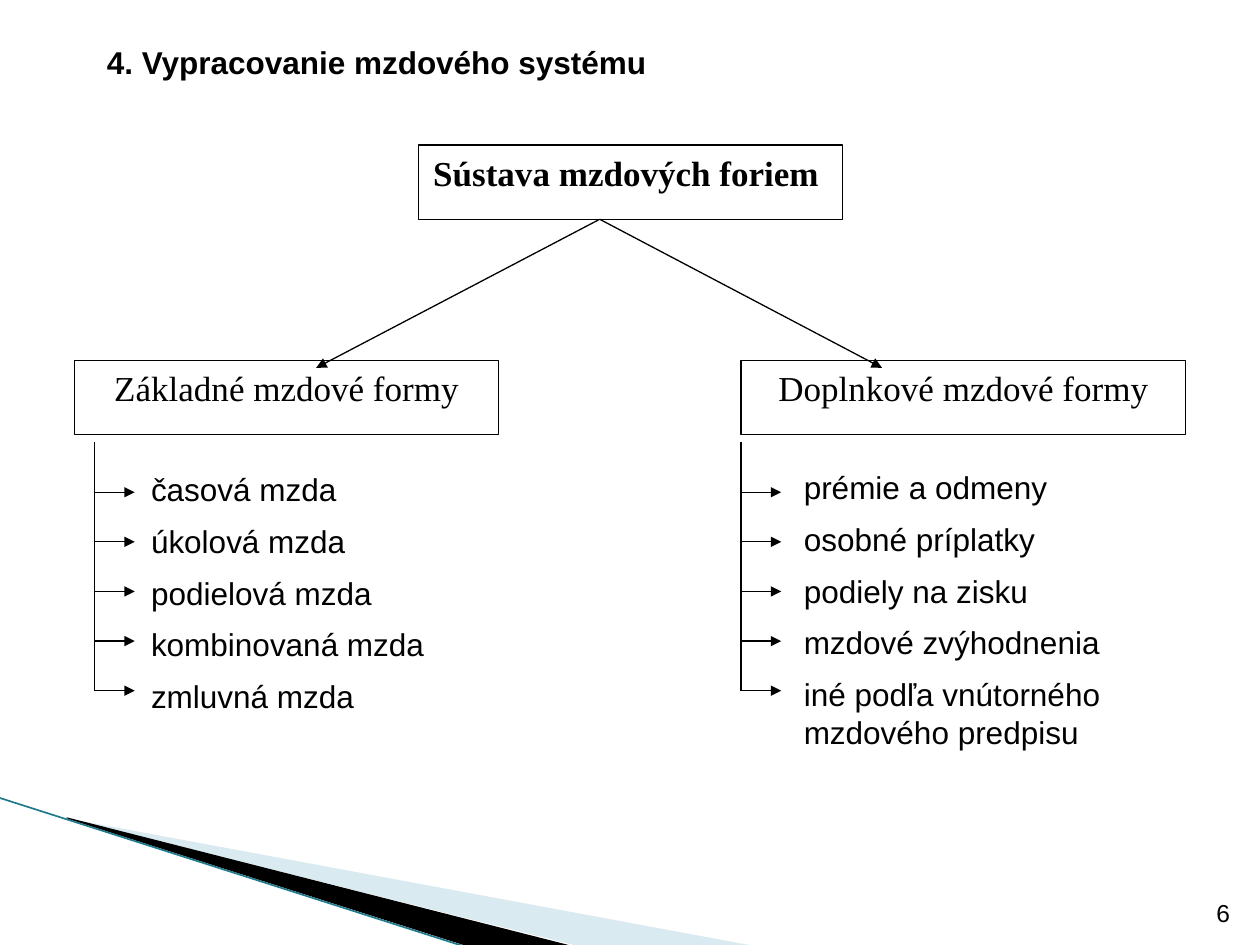
from dataclasses import dataclass

from lxml.etree import SubElement
from pptx import Presentation
from pptx.dml.color import RGBColor
from pptx.enum.shapes import MSO_CONNECTOR, MSO_SHAPE
from pptx.enum.text import MSO_ANCHOR, PP_ALIGN
from pptx.oxml.ns import qn
from pptx.shapes.connector import Connector
from pptx.slide import Slide
from pptx.text.text import TextFrame
from pptx.util import Pt

BLACK = RGBColor(0x00, 0x00, 0x00)
WHITE = RGBColor(0xFF, 0xFF, 0xFF)
PALE_BLUE = RGBColor(0xA0, 0xCB, 0xDC)
TEAL = RGBColor(0x1F, 0x7A, 0x8C)

SANS, SERIF = "Arial", "Times New Roman"
BRANCH_TOP, FIRST_ARROW, ARROW_STEP, ARROW_LENGTH = 252.7, 281.3, 28.35, 23
BOX_HEIGHT = 42.5

Point = tuple[float, float]


@dataclass
class Frame:
    left: float
    top: float
    width: float
    height: float

    def emu(self) -> tuple[Pt, Pt, Pt, Pt]:
        return Pt(self.left), Pt(self.top), Pt(self.width), Pt(self.height)


@dataclass
class WageGroup:
    heading: str
    box: Frame
    branch_x: float
    list_frame: Frame
    wage_forms: list[str]
    pointer_end: Point


@dataclass
class Wedge:
    outline: list[Point]
    color: RGBColor
    opacity: int


WEDGES = [
    Wedge([(39.6, 468.5), (428.4, 540.5), (328.3, 540.5), (39.6, 468)], PALE_BLUE, 40),
    Wedge([(38.2, 467.3), (329, 540.7), (267.8, 541.4), (38.9, 468)], BLACK, 100),
]

ROOT_BOX = Frame(239, 82.8, 242.6, BOX_HEIGHT)
POINTER_START = (342.7, 125.3)

GROUPS = [
    WageGroup(
        "Základné mzdové formy", Frame(42.5, 205.9, 242.6, BOX_HEIGHT),
        54, Frame(79.2, 265, 231.8, 145.4),
        ["časová mzda", "úkolová mzda", "podielová mzda", "kombinovaná mzda",
         "zmluvná mzda"],
        (180.7, 210.2),
    ),
    WageGroup(
        "Doplnkové mzdové formy", Frame(423.4, 205.9, 254.2, BOX_HEIGHT),
        423.4, Frame(452.2, 263.9, 236.9, 167),
        ["prémie a odmeny", "osobné príplatky", "podiely na zisku",
         "mzdové zvýhodnenia", "iné podľa vnútorného mzdového predpisu"],
        (504, 210.2),
    ),
]


def write(frame: TextFrame, lines: list[str], size: float, font: str = SANS,
          bold: bool = False, align: PP_ALIGN = PP_ALIGN.LEFT, gap: float = 0) -> None:
    frame.word_wrap = True
    frame.text = "\n".join(lines)
    for index, paragraph in enumerate(frame.paragraphs):
        paragraph.alignment = align
        if index:
            paragraph.space_before = Pt(gap)
        for run in paragraph.runs:
            run.font.name = font
            run.font.size = Pt(size)
            run.font.bold = bold
            run.font.color.rgb = BLACK


def add_text(slide: Slide, place: Frame) -> TextFrame:
    return slide.shapes.add_textbox(*place.emu()).text_frame


def add_box(slide: Slide, place: Frame, heading: str, bold: bool = False) -> None:
    box = slide.shapes.add_shape(MSO_SHAPE.RECTANGLE, *place.emu())
    box.shadow.inherit = False
    box.fill.solid()
    box.fill.fore_color.rgb = WHITE
    box.line.color.rgb = BLACK
    box.line.width = Pt(0.75)
    box.text_frame.vertical_anchor = MSO_ANCHOR.TOP
    write(box.text_frame, [heading], 20, SERIF, bold, PP_ALIGN.CENTER)


def add_line(slide: Slide, start: Point, end: Point, color: RGBColor = BLACK,
             width: float = 0.75) -> Connector:
    line = slide.shapes.add_connector(
        MSO_CONNECTOR.STRAIGHT, *(Pt(value) for value in start + end))
    line.line.color.rgb = color
    line.line.width = Pt(width)
    SubElement(line._element.spPr, qn("a:effectLst"))
    return line


def add_arrow(slide: Slide, start: Point, end: Point) -> None:
    arrow = add_line(slide, start, end)
    SubElement(arrow.line._get_or_add_ln(), qn("a:tailEnd"), type="triangle")


def add_wedge(slide: Slide, wedge: Wedge) -> None:
    first, *rest = wedge.outline
    builder = slide.shapes.build_freeform(*first, scale=Pt(1))
    builder.add_line_segments(rest, close=True)
    shape = builder.convert_to_shape()
    shape.shadow.inherit = False
    shape.line.fill.background()
    shape.fill.solid()
    shape.fill.fore_color.rgb = wedge.color
    if wedge.opacity < 100:
        color = shape._element.spPr.find(qn("a:solidFill"))[0]
        SubElement(color, qn("a:alpha"), val=str(wedge.opacity * 1000))


def add_group(slide: Slide, group: WageGroup) -> None:
    """Draw a heading box, its pointer and the branching list below it."""
    add_box(slide, group.box, group.heading)
    add_arrow(slide, POINTER_START, group.pointer_end)
    x = group.branch_x
    levels = [FIRST_ARROW + i * ARROW_STEP for i in range(len(group.wage_forms))]
    add_line(slide, (x, BRANCH_TOP), (x, levels[-1]))
    for y in levels:
        add_arrow(slide, (x, y), (x + ARROW_LENGTH, y))
    write(add_text(slide, group.list_frame), group.wage_forms, 18, gap=8)


def main() -> None:
    deck = Presentation()
    deck.slide_width, deck.slide_height = Pt(720), Pt(540)
    slide = deck.slides.add_slide(deck.slide_layouts[6])

    for wedge in WEDGES:
        add_wedge(slide, wedge)
    add_line(slide, (-0.7, 455.8), (267.1, 541.4), TEAL, 0.95)

    title = add_text(slide, Frame(54, 21, 629.3, 94.3))
    write(title, ["4. Vypracovanie mzdového systému"], 18, bold=True)

    add_box(slide, ROOT_BOX, "Sústava mzdových foriem ", bold=True)
    for group in GROUPS:
        add_group(slide, group)

    page_number = add_text(slide, Frame(681.1, 504.7, 28.8, 28.8))
    page_number.vertical_anchor = MSO_ANCHOR.BOTTOM
    write(page_number, ["6"], 14, align=PP_ALIGN.RIGHT)

    deck.save("out.pptx")


if __name__ == "__main__":
    main()
